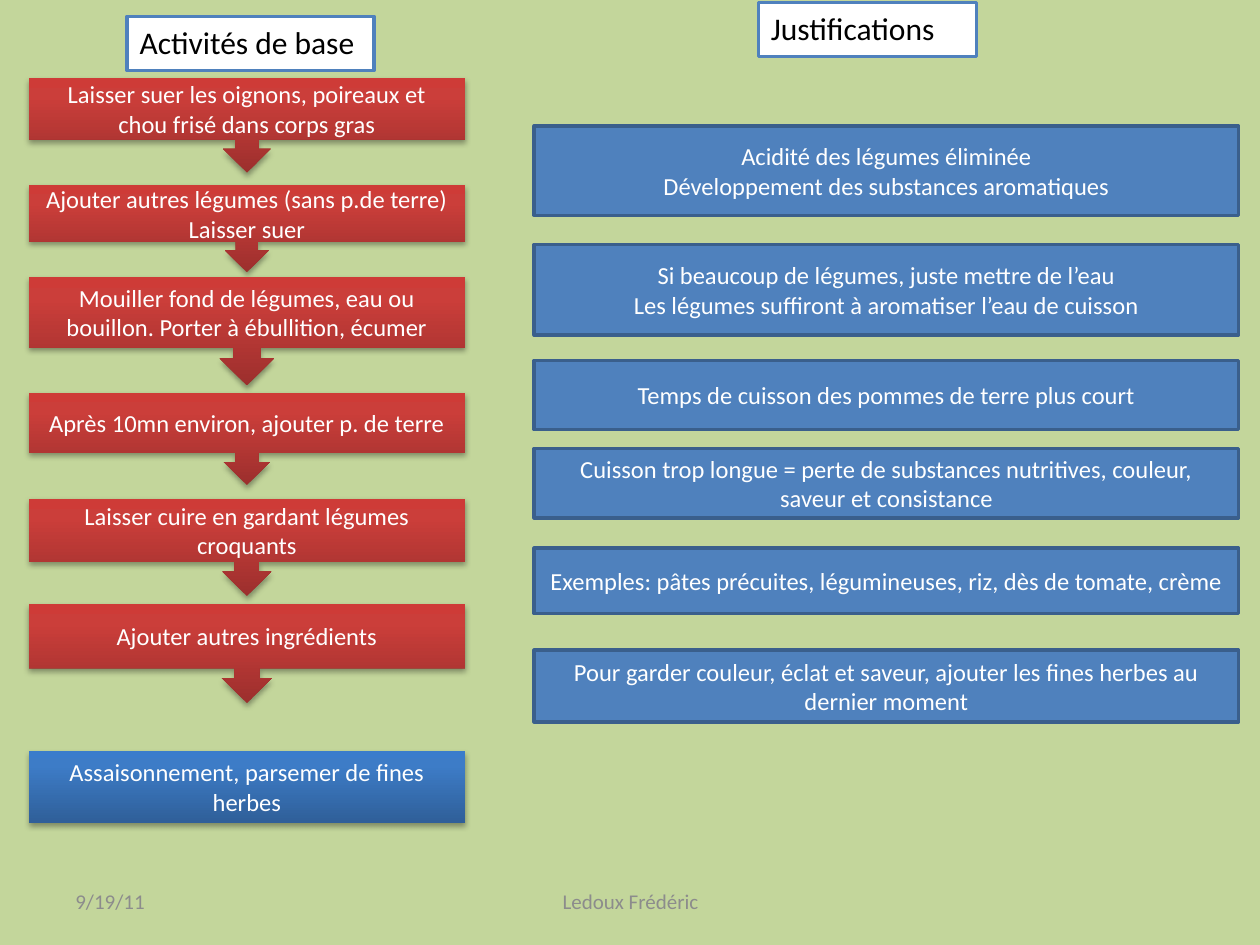
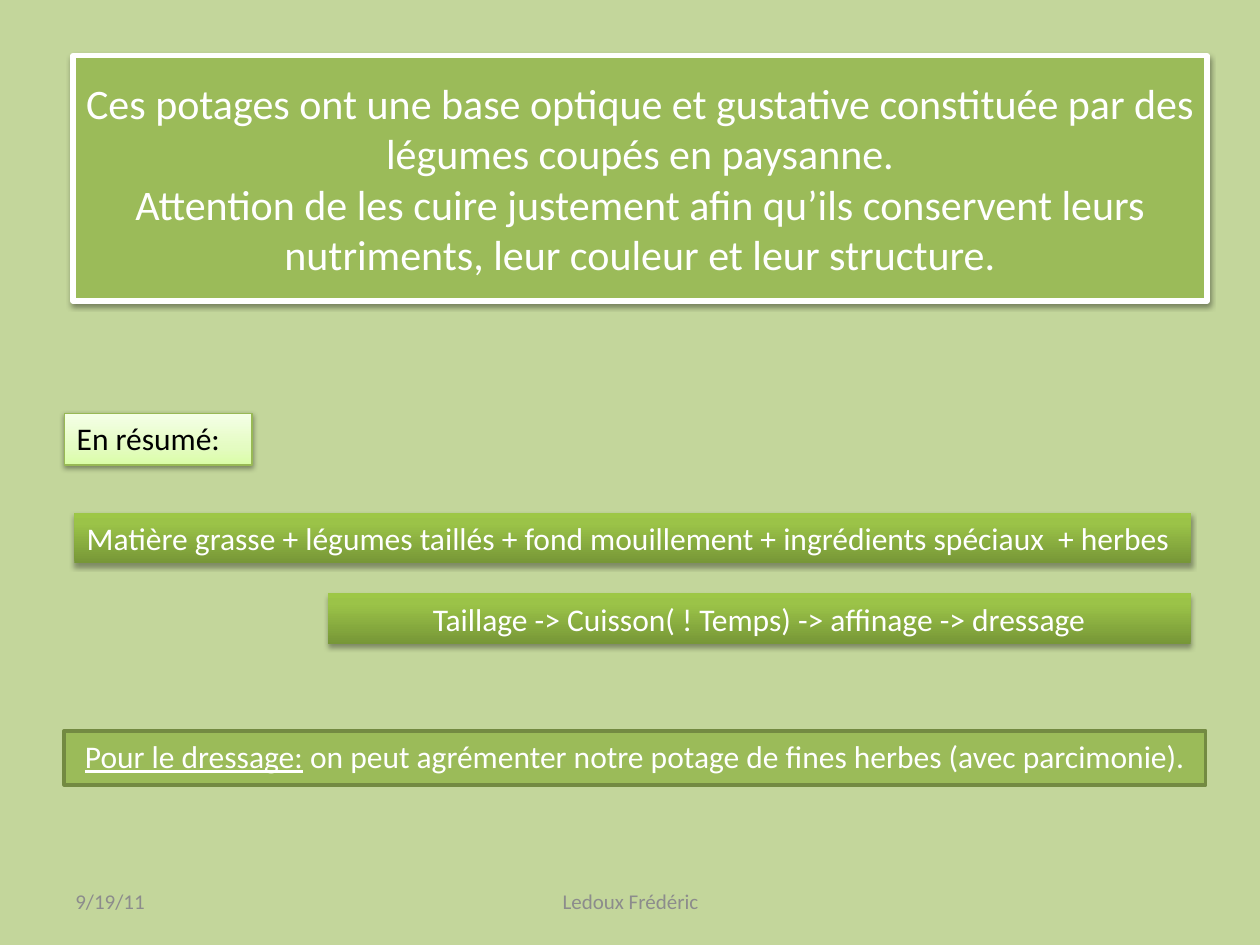
"""Build two slides on vegetable soups: work steps with their reasons, and a summary."""
from dataclasses import dataclass

from lxml import etree
from pptx import Presentation
from pptx.dml.color import RGBColor
from pptx.enum.shapes import MSO_SHAPE
from pptx.enum.text import MSO_ANCHOR, MSO_AUTO_SIZE, PP_ALIGN
from pptx.oxml.ns import qn
from pptx.util import Inches, Pt

LEFT, CENTER = PP_ALIGN.LEFT, PP_ALIGN.CENTER
TOP, MIDDLE = MSO_ANCHOR.TOP, MSO_ANCHOR.MIDDLE
FIXED, GROW = MSO_AUTO_SIZE.NONE, MSO_AUTO_SIZE.SHAPE_TO_FIT_TEXT
RECTANGLE, STEP_ARROW = MSO_SHAPE.RECTANGLE, MSO_SHAPE.DOWN_ARROW_CALLOUT
TITLE_ONLY, BLANK = 5, 6


@dataclass(frozen=True)
class Theme:
    """Colours, gradients and type sizes of the slides."""
    font: str = "Calibri"
    background: str = "C3D69B"
    light: str = "FFFFFF"
    dark: str = "000000"
    muted: str = "8C8C8C"
    blue: str = "4F81BD"
    blue_edge: str = "3A5F8C"
    green: str = "9BBB59"
    green_edge: str = "738A42"
    pale_edge: str = "98B955"
    red_fade: tuple = ((0, "9C2F2D"), (80, "CB3E3A"), (100, "CE3B37"))
    blue_fade: tuple = ((0, "2F5F99"), (80, "3D7CC7"), (100, "3A7CCB"))
    green_fade: tuple = ((0, "779737"), (80, "9BC348"), (100, "9DC746"))
    pale_fade: tuple = ((0, "DAFDA7"), (35, "E4FCC2"), (100, "F5FFE7"))
    title_size: int = 24
    label_size: int = 18
    body_size: int = 14
    footer_size: int = 12


THEME = Theme()
COLUMNS, ROWS, CELL = 100, 75, 0.1

STEP_COLUMN, STEP_WIDTH = 2.3, 34.6
STEPS = [
    (6.2, 7.5, ["Laisser suer les oignons, poireaux et chou frisé dans corps gras"]),
    (14.7, 6.9, ["Ajouter autres légumes (sans p.de terre)", "Laisser suer"]),
    (22, 8.6, ["Mouiller fond de légumes, eau ou bouillon. Porter à ébullition, écumer"]),
    (31.2, 7.3, ["Après 10mn environ, ajouter p. de terre"]),
    (39.6, 7.7, ["Laisser cuire en gardant légumes croquants"]),
    (47.9, 7.9, ["Ajouter autres ingrédients"]),
]
LAST_STEP = (59.6, 5.7, ["Assaisonnement, parsemer de fines herbes"])

REASON_COLUMN, REASON_WIDTH = 42.4, 55.9
REASONS = [
    (10, 7.1, ["Acidité des légumes éliminée", "Développement des substances aromatiques"]),
    (19.4, 7.2, ["Si beaucoup de légumes, juste mettre de l’eau",
                 "Les légumes suffiront à aromatiser l’eau de cuisson"]),
    (28.6, 5.5, ["Temps de cuisson des pommes de terre plus court"]),
    (35.6, 5.5, ["Cuisson trop longue = perte de substances nutritives, couleur, "
                 "saveur et consistance"]),
    (43.5, 5.2, ["Exemples: pâtes précuites, légumineuses, riz, dès de tomate, crème"]),
    (51.6, 5.7, ["Pour garder couleur, éclat et saveur, ajouter les fines herbes au "
                 "dernier moment"]),
]
HEADINGS = [
    ((10.1, 1.3, 19.6, 4.3), "Activités de base"),
    ((60.2, 0.2, 17.3, 4.3), "Justifications"),
]

CONCLUSION = ("Ces potages ont une base optique et gustative constituée par des légumes "
              "coupés en paysanne.\vAttention de les cuire justement afin qu’ils "
              "conservent leurs nutriments, leur couleur et leur structure.")
CONCLUSION_AREA = (5.8, 4.4, 90, 19.5)
SUMMARY_LABEL = ((5.1, 32.8, 14.9, 4.1), "En résumé:")
FORMULAS = [
    ((5.9, 40.7, 88.6, 4), LEFT,
     "Matière grasse + légumes taillés + fond mouillement + ingrédients spéciaux  + herbes"),
    ((26, 47.1, 68.5, 4), CENTER, "Taillage -> Cuisson( ! Temps) -> affinage -> dressage"),
]
SERVING_AREA = (5.1, 58, 90.6, 4.3)
SERVING_LEAD = "Pour le dressage:"
SERVING_ADVICE = " on peut agrémenter notre potage de fines herbes (avec parcimonie)."
FOOTERS = [
    ((5, 69.5, 23.3, 4), LEFT, "9/19/11"),
    ((34.2, 69.5, 31.7, 4), CENTER, "Ledoux Frédéric"),
]


def rgb(value):
    """Return the colour for a hex value."""
    return RGBColor.from_string(value)


def lengths(area):
    """Turn grid cells into slide lengths."""
    return [Inches(round(cells * CELL, 2)) for cells in area]


def write(shape, paragraphs, size=THEME.body_size, color=THEME.light, align=CENTER,
          anchor=MIDDLE, fit=FIXED):
    """Fill a shape with formatted paragraphs."""
    frame = shape.text_frame
    frame.word_wrap, frame.auto_size, frame.vertical_anchor = True, fit, anchor
    frame.text = "\n".join(paragraphs)
    for paragraph in frame.paragraphs:
        paragraph.alignment = align
        for run in paragraph.runs:
            style(run, size, color)


def style(run, size, color):
    """Set the font of one run."""
    run.font.name, run.font.size = THEME.font, Pt(size)
    run.font.color.rgb = rgb(color)


def add_color(parent, tag, value, **attributes):
    """Append an element that carries one colour and return the colour."""
    holder = etree.SubElement(parent, qn(tag), **attributes)
    return etree.SubElement(holder, qn("a:srgbClr"), val=value)


def paint(shape, fill, edge=None, edge_width=2, shadow=None):
    """Set fill, outline and an optional shadow opacity and distance."""
    if isinstance(fill, str):
        shape.fill.solid()
        shape.fill.fore_color.rgb = rgb(fill)
    else:
        shape.fill.gradient()
        shape.fill.gradient_angle = 90
        stops = next(shape.element.iter(qn("a:gsLst")))
        for stop in list(stops):
            stops.remove(stop)
        for position, value in fill:
            add_color(stops, "a:gs", value, pos=str(position * 1000))
    if edge:
        shape.line.color.rgb = rgb(edge)
        shape.line.width = Pt(edge_width)
    else:
        shape.line.fill.background()
    shape.shadow.inherit = False
    if shadow:
        opacity, distance = shadow
        effects = next(shape.element.iter(qn("a:effectLst")))
        tint = add_color(effects, "a:outerShdw", THEME.dark, blurRad=str(Pt(3.1)),
                         dist=str(Pt(distance)), dir="5400000", rotWithShape="0")
        etree.SubElement(tint, qn("a:alpha"), val=str(opacity * 1000))


def add_box(slide, area, paragraphs, fill, kind=RECTANGLE, edge=None, edge_width=2,
            shadow=None, **text_format):
    """Add a painted shape with text."""
    box = slide.shapes.add_shape(kind, *lengths(area))
    paint(box, fill, edge, edge_width, shadow)
    write(box, paragraphs, **text_format)
    return box


def add_footers(slide):
    """Add the date and the author."""
    for area, align, note in FOOTERS:
        write(slide.shapes.add_textbox(*lengths(area)), [note], align=align,
              size=THEME.footer_size, color=THEME.muted)


def build_steps(slide):
    """Lay out the work steps beside their reasons."""
    raised = {"shadow": (35, 1.8)}
    for row, height, step in STEPS:
        add_box(slide, (STEP_COLUMN, row, STEP_WIDTH, height), step, THEME.red_fade,
                kind=STEP_ARROW, **raised)
    row, height, step = LAST_STEP
    add_box(slide, (STEP_COLUMN, row, STEP_WIDTH, height), step, THEME.blue_fade, **raised)
    for row, height, reason in REASONS:
        add_box(slide, (REASON_COLUMN, row, REASON_WIDTH, height), reason, THEME.blue,
                edge=THEME.blue_edge)
    for area, heading in HEADINGS:
        add_box(slide, area, [heading], THEME.light, edge=THEME.blue, color=THEME.dark,
                size=THEME.label_size, align=LEFT, anchor=TOP, fit=GROW)
    add_footers(slide)


def build_summary(slide):
    """Lay out the conclusion and the summary lines."""
    title = slide.shapes.title
    title.left, title.top, title.width, title.height = lengths(CONCLUSION_AREA)
    paint(title, THEME.green, THEME.light, 3, shadow=(38, 1.6))
    write(title, [CONCLUSION], size=THEME.title_size)

    label = {"size": THEME.label_size, "anchor": TOP, "fit": GROW}
    area, heading = SUMMARY_LABEL
    add_box(slide, area, [heading], THEME.pale_fade, edge=THEME.pale_edge, edge_width=0.75,
            shadow=(38, 1.6), color=THEME.dark, align=LEFT, **label)
    for area, align, formula in FORMULAS:
        add_box(slide, area, [formula], THEME.green_fade, shadow=(35, 1.8), align=align,
                **label)
    serving = add_box(slide, SERVING_AREA, [SERVING_LEAD], THEME.green,
                      edge=THEME.green_edge, **label)
    sentence = serving.text_frame.paragraphs[0]
    sentence.runs[0].font.underline = True
    advice = sentence.add_run()
    advice.text = SERVING_ADVICE
    style(advice, THEME.label_size, THEME.light)
    add_footers(slide)


def main():
    """Create and save the presentation."""
    deck = Presentation()
    deck.slide_width, deck.slide_height = lengths((COLUMNS, ROWS))
    backdrop = deck.slide_master.background.fill
    backdrop.solid()
    backdrop.fore_color.rgb = rgb(THEME.background)
    build_steps(deck.slides.add_slide(deck.slide_layouts[BLANK]))
    build_summary(deck.slides.add_slide(deck.slide_layouts[TITLE_ONLY]))
    deck.save("out.pptx")


if __name__ == "__main__":
    main()
